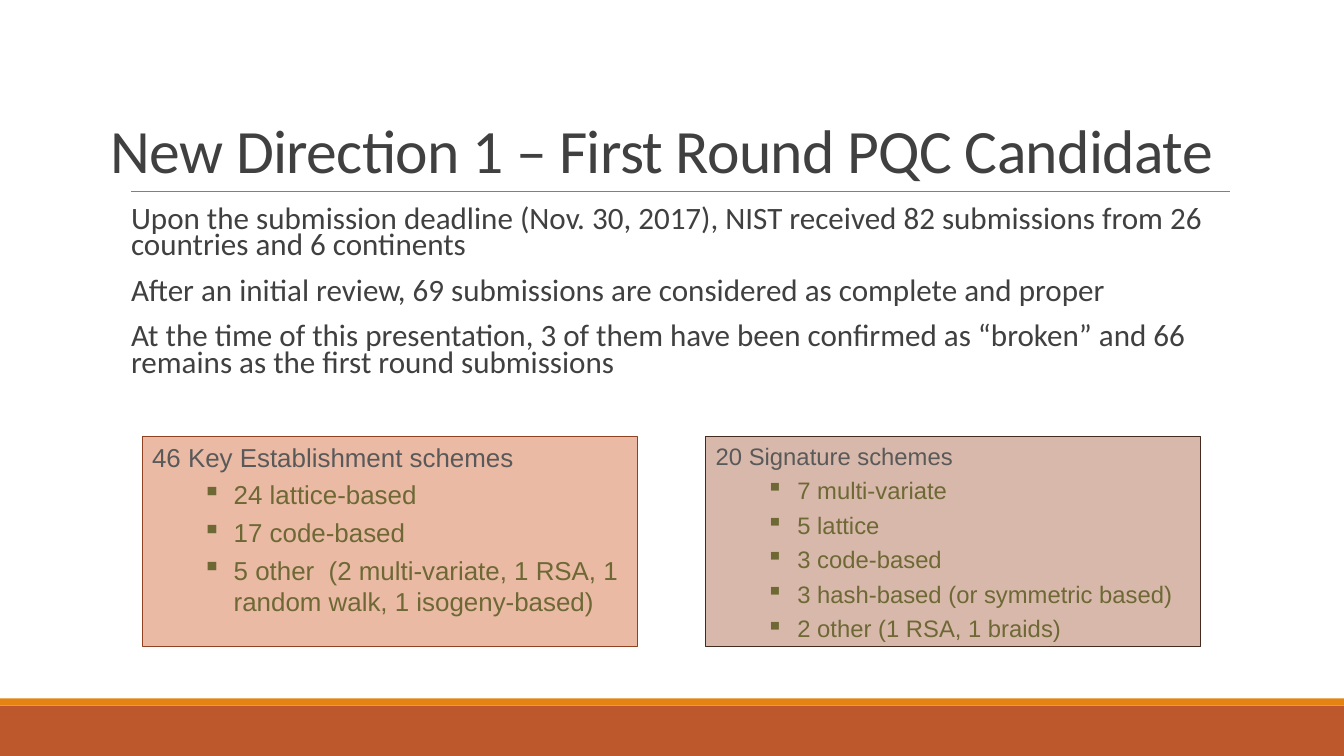
"""Build the slide on first round PQC candidates."""
from dataclasses import dataclass

from lxml.etree import SubElement
from pptx import Presentation
from pptx.dml.color import RGBColor
from pptx.enum.shapes import MSO_CONNECTOR as Connector, MSO_SHAPE as Shape
from pptx.enum.text import MSO_ANCHOR as Anchor, PP_ALIGN as Align
from pptx.oxml.ns import qn
from pptx.util import Inches, Pt


@dataclass(frozen=True)
class Theme:
    heading_font: str = "Calibri"
    box_font: str = "Arial"
    ink: str = "404040"
    box_heading: str = "595959"
    box_item: str = "6D6834"
    rule: str = "808080"
    footer: str = "BD582C"
    stripe: str = "E48312"
    key_fill: str = "EABAA5"
    key_line: str = "8E4221"
    signature_fill: str = "D7B8AB"
    signature_line: str = "432B20"
    title_size: float = 44
    body_size: float = 22.2
    key_size: float = 18.5
    signature_size: float = 17


theme = Theme()


def write(frame, text, *, size, color, font, before=0, after=0, spacing=1.0,
          margin=0, indent=0, bullet=None, tracking=0):
    """Append one formatted paragraph to a text frame."""
    paragraph = frame.add_paragraph() if frame.text else frame.paragraphs[0]
    paragraph.alignment = Align.LEFT
    paragraph.line_spacing = spacing
    paragraph.space_before, paragraph.space_after = Pt(before), Pt(after)
    properties = paragraph._p.get_or_add_pPr()
    properties.set("marL", str(Inches(margin)))
    properties.set("indent", str(Inches(indent)))
    if bullet:
        SubElement(properties, qn("a:buChar")).set("char", bullet)
    run = paragraph.add_run()
    run.text = text
    run.font.size, run.font.name = Pt(size), font
    run.font.color.rgb = RGBColor.from_string(color)
    if tracking:
        run._r.get_or_add_rPr().set("spc", str(int(tracking * 100)))


def add_box(left, top, width, height, fill, line=None):
    """Add a flat rectangle, outlined when a line colour is given."""
    box = slide.shapes.add_shape(Shape.RECTANGLE, Inches(left), Inches(top),
                                 Inches(width), Inches(height))
    box.shadow.inherit = False
    box.fill.solid()
    box.fill.fore_color.rgb = RGBColor.from_string(fill)
    if line:
        box.line.color.rgb = RGBColor.from_string(line)
        box.line.width = Pt(0.75)
    else:
        box.line.fill.background()
    return box


deck = Presentation()
deck.slide_width, deck.slide_height = Inches(13.33), Inches(7.5)
slide = deck.slides.add_slide(deck.slide_layouts[5])

add_box(0, 7, 13.33, 0.5, theme.footer)
add_box(0, 6.93, 13.33, 0.07, theme.stripe)

title_rule = slide.shapes.add_connector(
    Connector.STRAIGHT, Inches(1.3), Inches(1.9), Inches(12.2), Inches(1.9))
title_rule.line.color.rgb = RGBColor.from_string(theme.rule)
title_rule.line.width = Pt(0.5)
SubElement(title_rule._element.spPr, qn("a:effectLst"))

title = slide.shapes.title
title.left, title.top = Inches(1), Inches(0.31)
title.width, title.height = Inches(11.2), Inches(1.59)
title.text_frame.vertical_anchor = Anchor.BOTTOM
title.text_frame.word_wrap = True
write(title.text_frame, "New Direction 1 – First Round PQC Candidate",
      size=theme.title_size, color=theme.ink, font=theme.heading_font,
      spacing=0.85, tracking=-0.5)

summary = slide.shapes.add_textbox(
    Inches(1.2), Inches(2.02), Inches(11), Inches(1.9)).text_frame
summary.word_wrap = True
summary.margin_left = summary.margin_right = 0
for statement in (
    "Upon the submission deadline (Nov. 30, 2017), NIST received 82 "
    "submissions from 26 countries and 6 continents",
    "After an initial review, 69 submissions are considered as complete and proper",
    "At the time of this presentation, 3 of them have been confirmed as "
    "“broken” and 66 remains as the first round submissions",
):
    write(summary, statement, size=theme.body_size, color=theme.ink,
          font=theme.heading_font, before=12, after=2, spacing=0.7, margin=0.1)

schemes = (
    (1.41, theme.key_fill, theme.key_line, theme.key_size,
     "46 Key Establishment schemes",
     ("24 lattice-based", "17 code-based",
      "5 other  (2 multi-variate, 1 RSA, 1 random walk, 1 isogeny-based)")),
    (7, theme.signature_fill, theme.signature_line, theme.signature_size,
     "20 Signature schemes",
     ("7 multi-variate", "5 lattice", "3 code-based",
      "3 hash-based (or symmetric based)", "2 other (1 RSA, 1 braids)")),
)
for left, fill, line, size, heading, families in schemes:
    scheme = add_box(left, 4.33, 4.91, 2.08, fill, line).text_frame
    scheme.word_wrap = True
    scheme.vertical_anchor = Anchor.TOP
    write(scheme, heading, size=size, color=theme.box_heading,
          font=theme.box_font, before=size / 4, margin=0.38, indent=-0.38)
    for family in families:
        write(scheme, family, size=size, color=theme.box_item,
              font=theme.box_font, before=size / 4, margin=0.81,
              indent=-0.31, bullet="▪")

deck.save("out.pptx")
